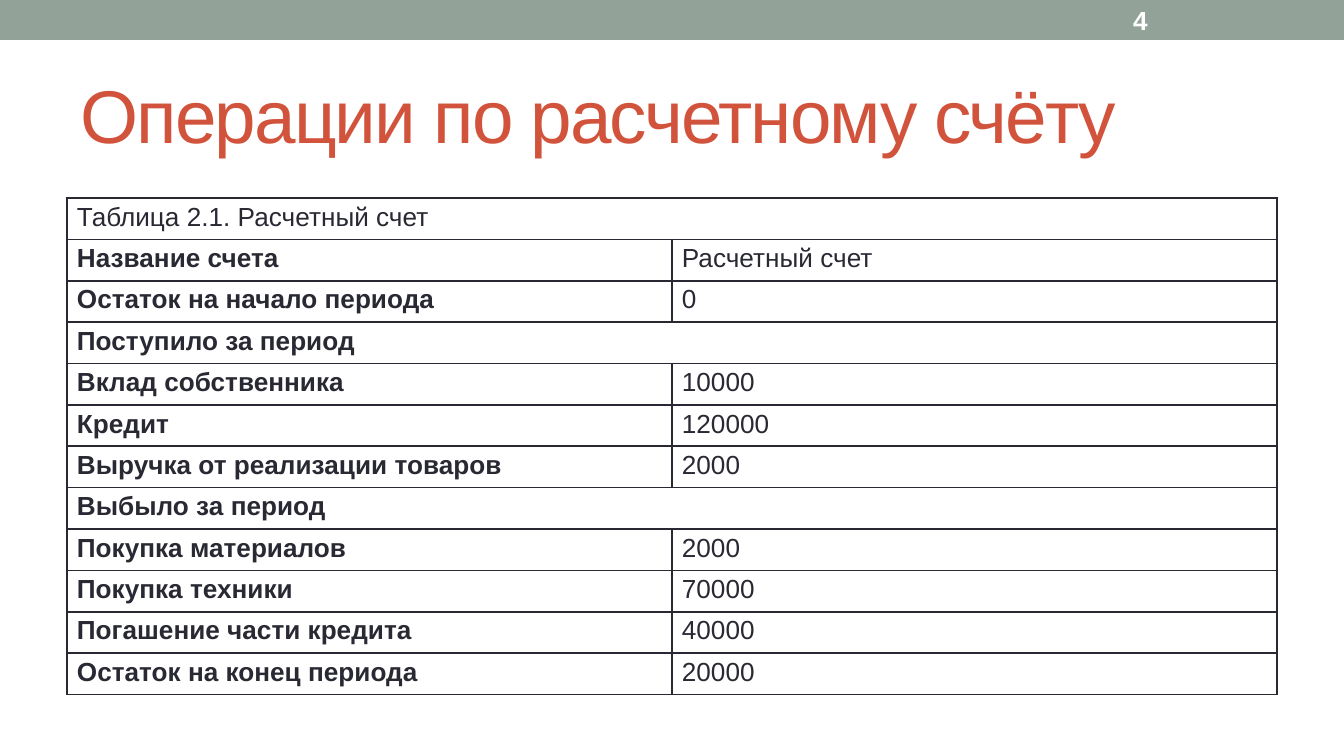
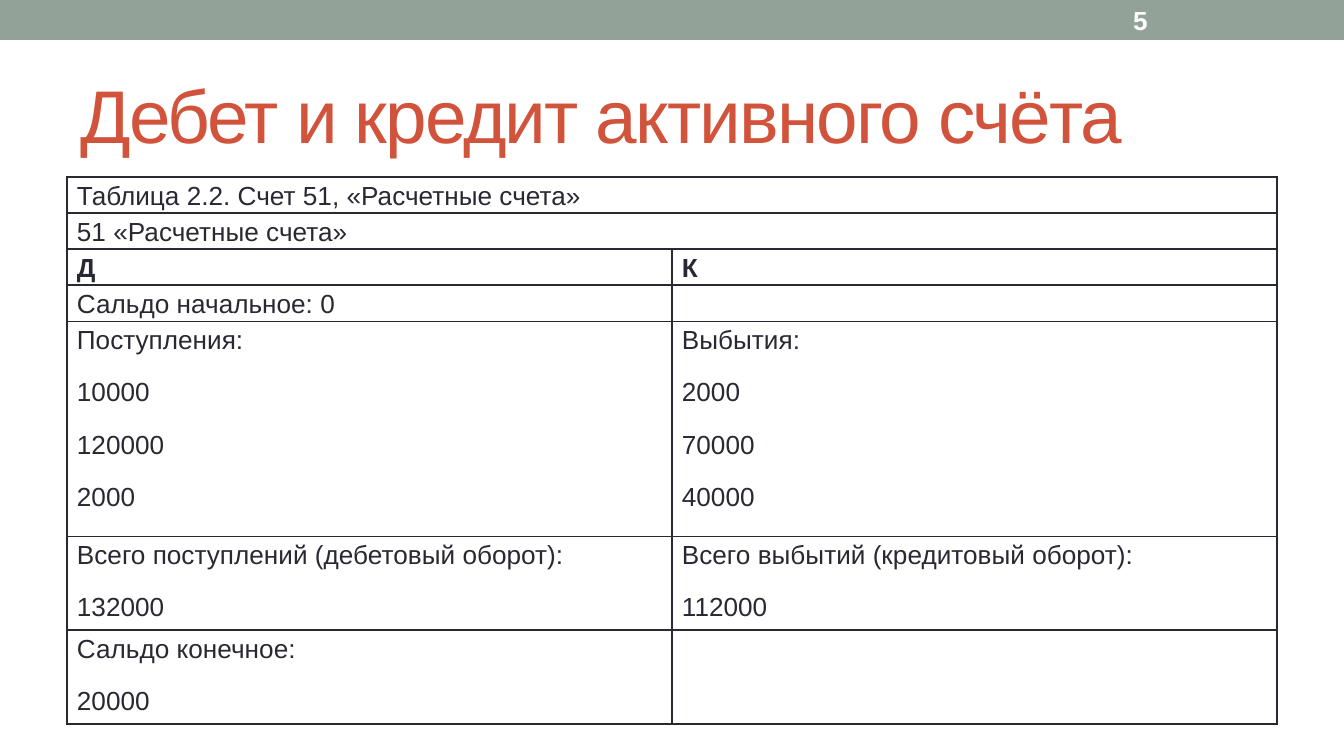
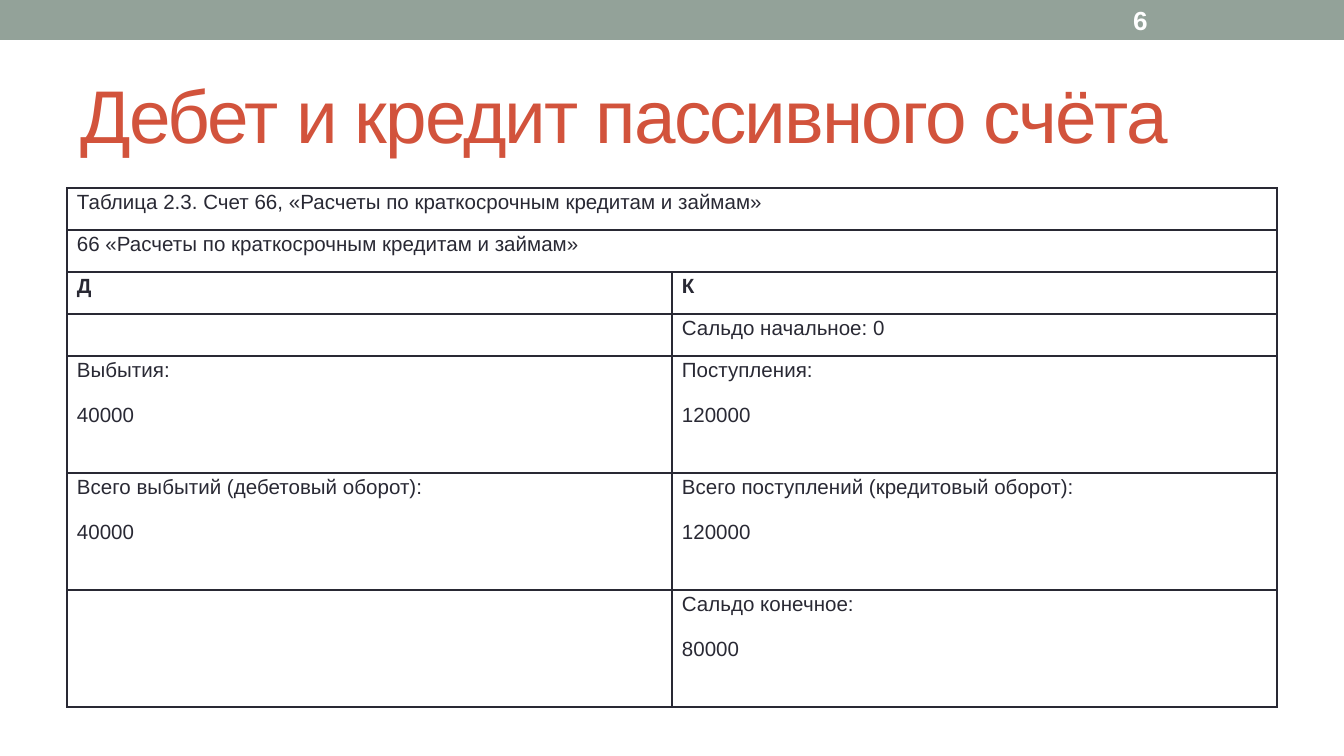
from pptx import Presentation
from pptx import util as u
from pptx.dml.color import RGBColor
from pptx.enum import shapes, text
from pptx.oxml import parse_xml
from pptx.oxml.ns import nsdecls

SLIDE_WIDTH, SLIDE_HEIGHT = 1344, 756
EMU_PER_PX = u.Inches(10) / SLIDE_WIDTH
LEFT, WIDTH = 67, 1210
CELL_INSET = 10
FONT = "Arial"
SAGE = RGBColor(0x93, 0xA2, 0x99)
BRICK = RGBColor(0xD2, 0x53, 0x3C)
INK = RGBColor(0x29, 0x29, 0x34)
WHITE = RGBColor(0xFF, 0xFF, 0xFF)


def px(length):
    return u.Emu(round(length * EMU_PER_PX))


def box(*lengths):
    return [px(length) for length in lengths]


class Deck:
    def __init__(self, first_number):
        self.presentation = Presentation()
        self.presentation.slide_width = px(SLIDE_WIDTH)
        self.presentation.slide_height = px(SLIDE_HEIGHT)
        self.number = first_number
        self.slide = None

    def add_slide(self, title):
        layout = self.presentation.slide_layouts[5]
        is_first = self.slide is None
        self.slide = self.presentation.slides.add_slide(layout)
        if is_first:
            self.add_master_band()
        self.add_title(title)
        self.add_number()

    def add_master_band(self):
        """Draw the top band and move it behind everything on the master."""
        band = self.slide.shapes.add_shape(
            shapes.MSO_SHAPE.RECTANGLE, *box(0, 0, SLIDE_WIDTH, 40))
        band.shadow.inherit = False
        band.fill.solid()
        band.fill.fore_color.rgb = SAGE
        band.line.fill.background()
        self.presentation.slide_master.shapes.element.insert(2, band.element)

    def format_text(self, paragraph, size, color, bold=False):
        paragraph.alignment = text.PP_ALIGN.LEFT
        for run in paragraph.runs:
            run.font.name = FONT
            run.font.size = u.Pt(size)
            run.font.bold = bold
            run.font.color.rgb = color

    def add_title(self, title):
        shape = self.slide.shapes.title
        shape.left, shape.top, shape.width, shape.height = box(LEFT, 59, WIDTH, 109)
        frame = shape.text_frame
        frame.text = title
        frame.auto_size = text.MSO_AUTO_SIZE.NONE
        frame.vertical_anchor = text.MSO_ANCHOR.MIDDLE
        paragraph = frame.paragraphs[0]
        self.format_text(paragraph, 40, BRICK)
        paragraph.runs[0].font._element.set("spc", "-100")

    def add_number(self):
        frame = self.slide.shapes.add_textbox(*box(1120, 2, 157, 36)).text_frame
        frame.word_wrap = True
        frame.vertical_anchor = text.MSO_ANCHOR.MIDDLE
        frame.text = str(self.number)
        self.format_text(frame.paragraphs[0], 14, WHITE, bold=True)
        self.number += 1

    def add_table(self, top, heights, rows, size, is_bold):
        """Rows with a single text span both columns."""
        frame = self.slide.shapes.add_table(
            len(rows), 2, *box(LEFT, top, WIDTH, sum(heights)))
        table = frame.table
        table.first_row = table.horz_banding = False
        for row_index, (height, texts) in enumerate(zip(heights, rows)):
            table.rows[row_index].height = px(height)
            for column in range(2):
                self.format_cell(table.cell(row_index, column))
            if len(texts) == 1:
                table.cell(row_index, 0).merge(table.cell(row_index, 1))
            for column, content in enumerate(texts):
                self.fill_cell(table.cell(row_index, column), content, size,
                               is_bold(row_index, column))

    def format_cell(self, cell):
        cell.margin_left = cell.margin_right = px(CELL_INSET)
        cell.margin_top = cell.margin_bottom = 0
        properties = cell._tc.get_or_add_tcPr()
        for side in "LRTB":
            properties.append(parse_xml(
                f'<a:ln{side} {nsdecls("a")} w="{u.Pt(1)}"><a:solidFill>'
                f'<a:srgbClr val="{INK}"/></a:solidFill></a:ln{side}>'))
        cell.fill.background()

    def fill_cell(self, cell, content, size, bold):
        cell.text_frame.text = content
        for paragraph in cell.text_frame.paragraphs:
            paragraph.line_spacing = 1.15
            paragraph.space_after = u.Pt(10)
            self.format_text(paragraph, size, INK, bold)
            if not content:
                # An empty cell would otherwise be as tall as 18 pt text.
                paragraph._p.get_or_add_endParaRPr().set("sz", str(size * 100))


def main():
    deck = Deck(first_number=4)

    deck.add_slide("Операции по расчетному счёту")
    operations = [
        ("Таблица 2.1. Расчетный счет",),
        ("Название счета", "Расчетный счет"),
        ("Остаток на начало периода", "0"),
        ("Поступило за период",),
        ("Вклад собственника", "10000"),
        ("Кредит", "120000"),
        ("Выручка от реализации товаров", "2000"),
        ("Выбыло за период",),
        ("Покупка материалов", "2000"),
        ("Покупка техники", "70000"),
        ("Погашение части кредита", "40000"),
        ("Остаток на конец периода", "20000"),
    ]
    row_height = 497 / len(operations)
    deck.add_table(198, [row_height] * len(operations), operations, 14,
                   lambda row, column: row > 0 and column == 0)

    def is_account_heading(row, column):
        return row == 2

    deck.add_slide("Дебет и кредит активного счёта")
    active_account = [
        ("Таблица 2.2. Счет 51, «Расчетные счета»",),
        ("51 «Расчетные счета»",),
        ("Д", "К"),
        ("Сальдо начальное: 0", ""),
        ("Поступления:\n10000\n120000\n2000", "Выбытия:\n2000\n70000\n40000"),
        ("Всего поступлений (дебетовый оборот):\n132000",
         "Всего выбытий (кредитовый оборот):\n112000"),
        ("Сальдо конечное:\n20000", ""),
    ]
    deck.add_table(177, [34] * 4 + [215, 94, 94], active_account, 14,
                   is_account_heading)

    deck.add_slide("Дебет и кредит пассивного счёта")
    passive_account = [
        ("Таблица 2.3. Счет 66, «Расчеты по краткосрочным кредитам и займам»",),
        ("66 «Расчеты по краткосрочным кредитам и займам»",),
        ("Д", "К"),
        ("", "Сальдо начальное: 0"),
        ("Выбытия:\n40000", "Поступления:\n120000"),
        ("Всего выбытий (дебетовый оборот):\n40000",
         "Всего поступлений (кредитовый оборот):\n120000"),
        ("", "Сальдо конечное:\n80000"),
    ]
    deck.add_table(188, [42] * 4 + [117] * 3, passive_account, 11,
                   is_account_heading)

    deck.presentation.save("out.pptx")


if __name__ == "__main__":
    main()
